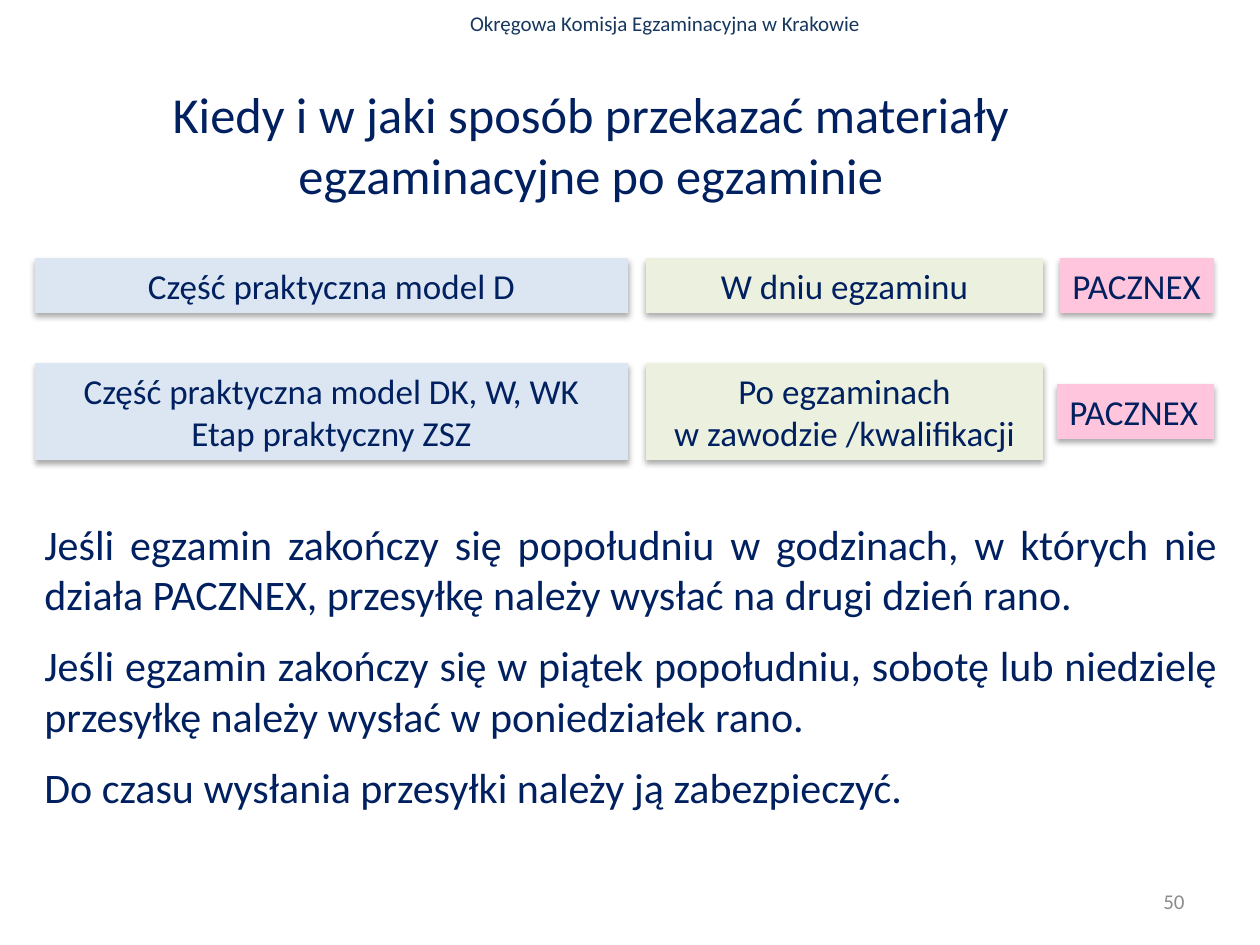
from lxml.etree import SubElement
from pptx import Presentation
from pptx.dml.color import RGBColor
from pptx.enum.shapes import MSO_SHAPE as Shape
from pptx.enum.text import MSO_ANCHOR as Anchor, PP_ALIGN as Align
from pptx.oxml.ns import qn
from pptx.util import Pt

PX = 914400 / 126
FONT = "Calibri"
NAVY = RGBColor(0x00, 0x20, 0x60)
HEADER_BLUE = RGBColor(0x17, 0x37, 0x5E)
GREY = RGBColor(0x8C, 0x8C, 0x8C)
PALE_BLUE = RGBColor(0xDC, 0xE6, 0xF2)
PALE_GREEN = RGBColor(0xEB, 0xF1, 0xDE)
PINK = RGBColor(0xFF, 0xC5, 0xDC)

COURIER = "PACZNEX"
ADVICE = [
    f"Jeśli egzamin zakończy się popołudniu w godzinach, w których nie działa {COURIER}, "
    "przesyłkę należy wysłać na drugi dzień rano.",
    "Jeśli egzamin zakończy się w piątek popołudniu, sobotę lub niedzielę "
    "przesyłkę należy wysłać w poniedziałek rano.",
    "Do czasu wysłania przesyłki należy ją zabezpieczyć.",
]


def px(*lengths):
    return [round(length * PX) for length in lengths]


def write(box, lines, size, color=NAVY, align=Align.CENTER, anchor=Anchor.TOP, after=0):
    frame = box.text_frame
    frame.word_wrap = True
    frame.vertical_anchor = anchor
    frame.text = "\n".join(lines)
    for para in frame.paragraphs:
        para.alignment = align
        para.space_after = Pt(after)
        para.font.name = FONT
        para.font.size = Pt(size)
        para.font.color.rgb = color


def add_title(page, area, text):
    title = page.shapes.title
    title.left, title.top, title.width, title.height = px(*area)
    write(title, [text], 28.8, anchor=Anchor.MIDDLE)


def add_text(page, area, lines, size, **style):
    write(page.shapes.add_textbox(*px(*area)), lines, size, **style)


def add_shadow(box):
    effects = SubElement(box.element.spPr, qn("a:effectLst"))
    shadow = SubElement(effects, qn("a:outerShdw"), blurRad=str(Pt(3.5)), dist=str(Pt(2.2)),
                        dir="5400000", rotWithShape="0")
    black = SubElement(shadow, qn("a:srgbClr"), val="000000")
    SubElement(black, qn("a:alpha"), val="32000")


def add_card(page, area, lines, fill, align=Align.CENTER):
    card = page.shapes.add_shape(Shape.RECTANGLE, *px(*area))
    card.fill.solid()
    card.fill.fore_color.rgb = fill
    card.line.fill.background()
    add_shadow(card)
    write(card, lines, 20, align=align)
    return card


def add_courier_tag(page, area):
    tag = add_card(page, area, [COURIER], PINK, Align.LEFT)
    tag.text_frame.word_wrap = False


def add_row(page, top, height, exam_part, deadline):
    add_card(page, (35, top, 593, height), exam_part, PALE_BLUE)
    add_card(page, (646, top, 397, height), deadline, PALE_GREEN)


def main():
    deck = Presentation()
    deck.slide_width, deck.slide_height = px(1260, 945)
    page = deck.slides.add_slide(deck.slide_layouts[5])

    add_text(page, (144, 4, 1042, 38), ["Okręgowa Komisja Egzaminacyjna w Krakowie"],
             12, color=HEADER_BLUE)
    add_title(page, (55, 78, 1072, 132),
              "Kiedy i w jaki sposób przekazać materiały egzaminacyjne po egzaminie")
    add_row(page, 258, 55, ["Część praktyczna model D"], ["W dniu egzaminu"])
    add_courier_tag(page, (1060, 258, 154, 55))
    add_row(page, 363, 97, ["Część praktyczna model DK, W, WK", "Etap praktyczny ZSZ"],
            ["Po egzaminach\vw zawodzie /kwalifikacji"])
    add_courier_tag(page, (1057, 384, 157, 55))
    add_text(page, (32, 512, 1198, 310), ADVICE, 24, align=Align.JUSTIFY, after=12)
    add_text(page, (903, 876, 294, 50), ["50"], 12, color=GREY,
             align=Align.RIGHT, anchor=Anchor.MIDDLE)

    deck.save("out.pptx")


if __name__ == "__main__":
    main()
